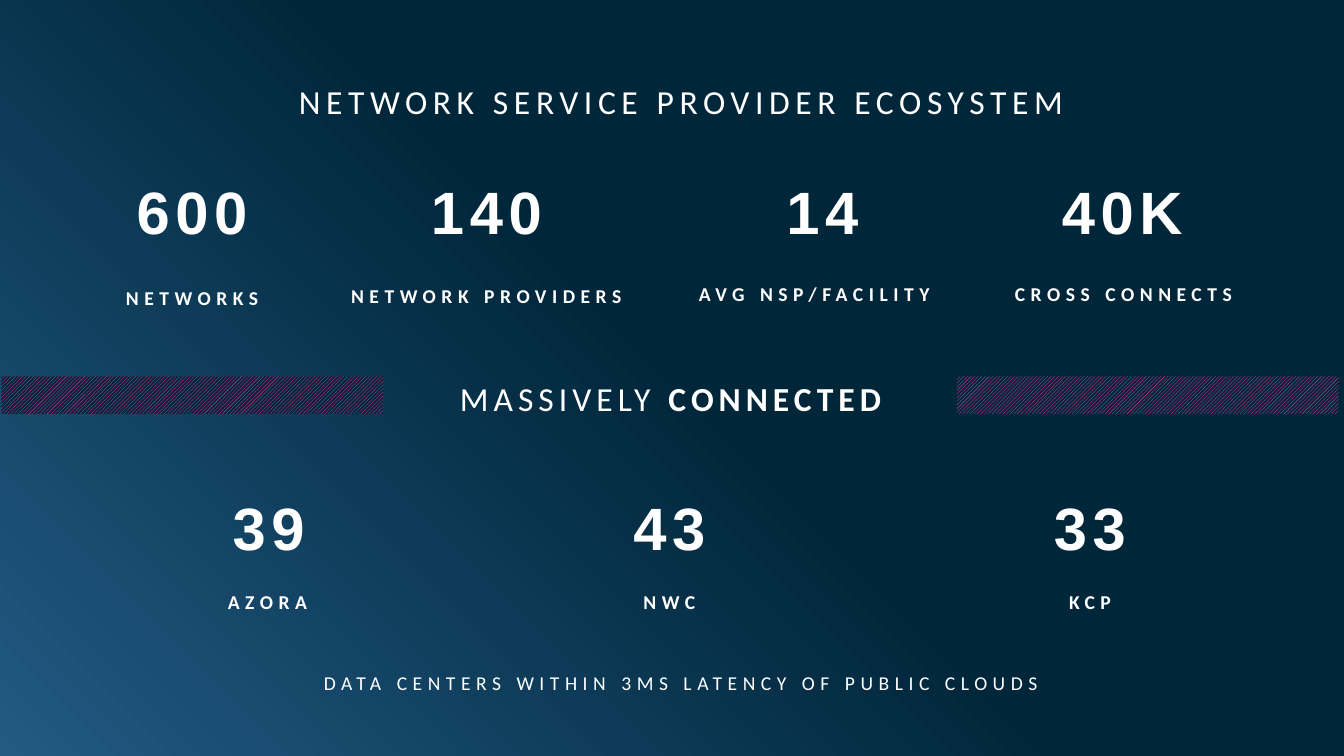
"""Build the network provider ecosystem slide."""
from pptx import Presentation
from pptx.dml.color import RGBColor
from pptx.enum.dml import MSO_PATTERN
from pptx.enum.shapes import MSO_SHAPE
from pptx.enum.text import MSO_AUTO_SIZE, PP_ALIGN
from pptx.util import Inches, Pt

HUES = {"navy": "00263A", "blue": "225A83", "pink": "FF38B6", "white": "FFFFFF"}
WIDE = 10
HIGH = WIDE * 9 / 16

# number, its center and width, label, its center, width and top
TOP = [
    ("600", 1.43, 1.07, "NETWORKS", 1.43, 1.98, 2.08),
    ("140", 3.62, 1.07, "NETWORK PROVIDERS", 3.62, 2.77, 2.06),
    ("14", 6.12, 0.8, "AVG NSP/FACILITY", 6.06, 2.48, 2.05),
    ("40K", 8.35, 1.22, "CROSS CONNECTS", 8.36, 2.48, 2.05),
]
CLOUDS = [
    ("39", 2, 0.78, "AZORA", 1.99, 2.89, 4.34),
    ("43", 4.98, 0.78, "NWC", 4.98, 1.98, 4.34),
    ("33", 8.11, 0.78, "KCP", 8.11, 1.98, 4.34),
]
ROWS = [(1.25, TOP), (3.6, CLOUDS)]
LINES = [
    ([("NETWORK SERVICE PROVIDER ECOSYSTEM", False)], 5.07, 0.55, 9.31, 0.4, 18, 3),
    ([("MASSIVELY", False), (" CONNECTED", True)], 4.99, 2.76, 4.27, 0.4, 18, 2.7),
    ([("DATA CENTERS WITHIN 3MS LATENCY OF PUBLIC CLOUDS", False)],
     5.07, 4.94, 9.79, 0.28, 10.5, 3),
]
BANDS = [0.01, 7.12]


def hue(name):
    return RGBColor.from_string(HUES[name])


def add_rect(slide, *box):
    rect = slide.shapes.add_shape(MSO_SHAPE.RECTANGLE, *map(Inches, box))
    rect.shadow.inherit = False
    rect.line.fill.background()
    return rect


def add_text(slide, runs, mid, top, width, height, size, gap=3, face="Calibri", wrap=True):
    box = slide.shapes.add_textbox(*map(Inches, (mid - width / 2, top, width, height)))
    frame = box.text_frame
    frame.word_wrap = wrap
    frame.auto_size = MSO_AUTO_SIZE.SHAPE_TO_FIT_TEXT
    para = frame.paragraphs[0]
    para.alignment = PP_ALIGN.CENTER
    for words, bold in runs:
        run = para.add_run()
        run.text = words
        font = run.font
        font.name, font.size, font.bold = face, Pt(size), bold
        font.color.rgb = hue("white")
        run._r.get_or_add_rPr().set("spc", str(round(gap * 100)))


def main():
    deck = Presentation()
    deck.slide_width, deck.slide_height = Inches(WIDE), Inches(HIGH)
    slide = deck.slides.add_slide(deck.slide_layouts[6])

    fill = add_rect(slide, 0, 0, WIDE, HIGH).fill
    fill.gradient()
    fill.gradient_angle = 45
    for stop, name, place in zip(fill.gradient_stops, ("blue", "navy"), (0, 0.51)):
        stop.color.rgb = hue(name)
        stop.position = place

    for left in BANDS:
        fill = add_rect(slide, left, 2.8, 2.84, 0.28).fill
        fill.patterned()
        fill.pattern = MSO_PATTERN.LIGHT_UPWARD_DIAGONAL
        fill.fore_color.rgb = hue("pink")
        fill.back_color.rgb = hue("navy")

    for line in LINES:
        add_text(slide, *line)
    for top, stats in ROWS:
        for count, mid, slim, label, axis, broad, base in stats:
            add_text(slide, [(count, True)], mid, top, slim, 0.64, 32, face="Arial", wrap=False)
            add_text(slide, [(label, True)], axis, base, broad, 0.28, 10.5)

    deck.save("out.pptx")


if __name__ == "__main__":
    main()
